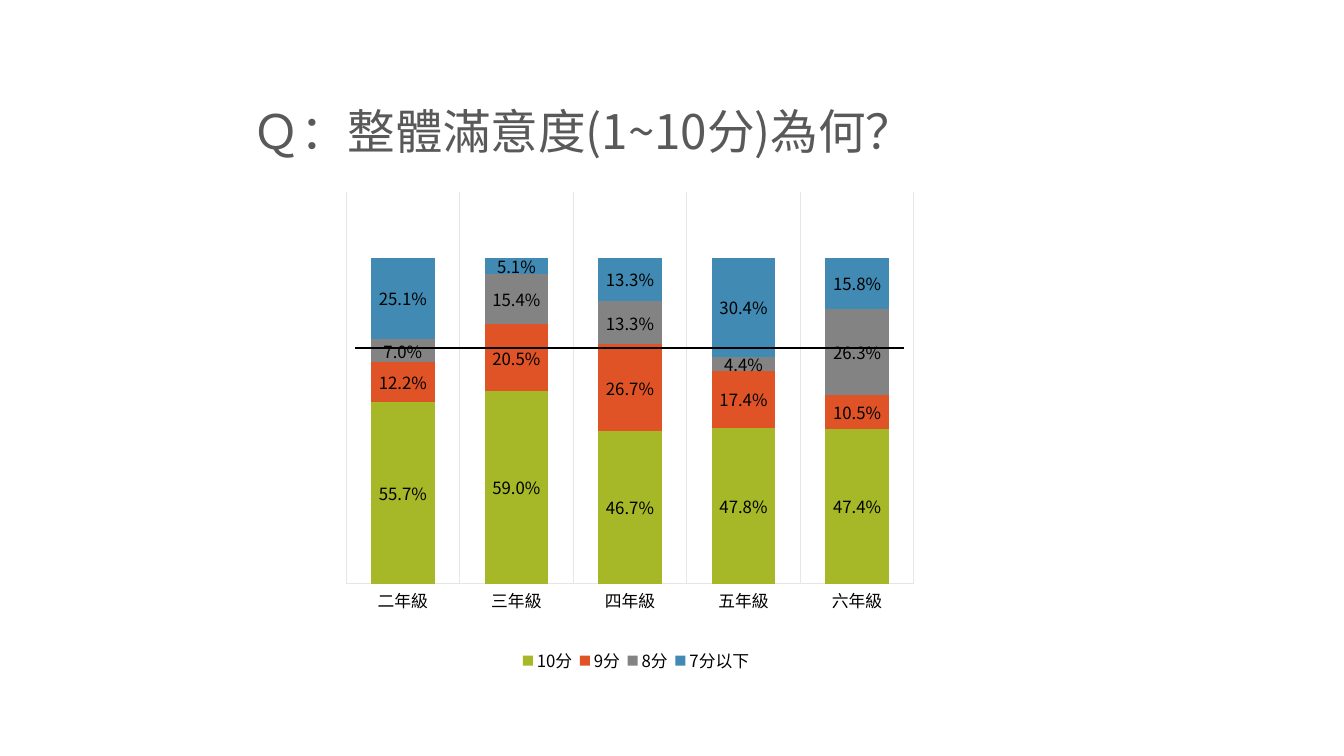
from lxml import etree
from pptx import Presentation
from pptx.chart.data import CategoryChartData
from pptx.dml.color import RGBColor
from pptx.enum.chart import XL_CHART_TYPE, XL_LABEL_POSITION, XL_LEGEND_POSITION, XL_TICK_MARK
from pptx.enum.shapes import MSO_CONNECTOR
from pptx.enum.text import MSO_ANCHOR
from pptx.oxml.ns import qn
from pptx.util import Emu, Pt

COLUMN_STACKED = XL_CHART_TYPE.COLUMN_STACKED
LABEL_CENTER = XL_LABEL_POSITION.CENTER
LEGEND_TOP = XL_LEGEND_POSITION.TOP
TICK_NONE = XL_TICK_MARK.NONE
STRAIGHT = MSO_CONNECTOR.STRAIGHT
ANCHOR_BOTTOM = MSO_ANCHOR.BOTTOM

FONT = "Noto Sans CJK SC"
COLORS = {
    "title": "595959",
    "text": "000000",
    "grid": "E6E6E6",
    "10分": "A6B727",
    "9分": "DF5327",
    "8分": "838383",
    "7分以下": "418AB3",
}
GRADES = ["二年級", "三年級", "四年級", "五年級", "六年級"]
SCORES = {
    "10分": [0.557, 0.59, 0.467, 0.478, 0.474],
    "9分": [0.122, 0.205, 0.267, 0.174, 0.105],
    "8分": [0.07, 0.154, 0.133, 0.044, 0.263],
    "7分以下": [0.251, 0.051, 0.133, 0.304, 0.158],
}


def px(*lengths):
    return [Emu(round(length * 914400 / 100.8)) for length in lengths]


def place(parent, index, settings):
    """Give a chart part a manual layout, as fractions of the chart."""
    for old_layout in parent.findall(qn("c:layout")):
        parent.remove(old_layout)
    layout = etree.Element(qn("c:layout"))
    manual = etree.SubElement(layout, qn("c:manualLayout"))
    for name, value in settings.items():
        etree.SubElement(manual, qn(f"c:{name}")).set("val", str(value))
    parent.insert(index, layout)


presentation = Presentation()
presentation.slide_width, presentation.slide_height = px(1344, 756)
slide = presentation.slides.add_slide(presentation.slide_layouts[6])

# Title
title = slide.shapes.add_textbox(*px(243, 33, 1033, 132))
text_frame = title.text_frame
text_frame.word_wrap = True
text_frame.vertical_anchor = ANCHOR_BOTTOM
text_frame.text = "Ｑ：整體滿意度(1~10分)為何？"
paragraph = text_frame.paragraphs[0]
paragraph.line_spacing = 0.9
run = paragraph.runs[0]
run.font.size = Pt(34)
run.font.name = FONT
run.font.color.rgb = RGBColor.from_string(COLORS["title"])
east_asian = etree.SubElement(run.font._element, qn("a:ea"))
east_asian.set("typeface", FONT)

# Chart data
chart_data = CategoryChartData(number_format="0.0%")
chart_data.categories = GRADES
for score, shares in SCORES.items():
    chart_data.add_series(score, shares)
chart = slide.shapes.add_chart(COLUMN_STACKED, *px(328, 166, 604, 529), chart_data).chart
chart.has_title = False

# Columns and their labels
plot = chart.plots[0]
plot.gap_width = 79
plot.overlap = 100
plot.vary_by_categories = False
fonts = [chart.font]
for series in plot.series:
    series.format.fill.solid()
    series.format.fill.fore_color.rgb = RGBColor.from_string(COLORS[series.name])
    labels = series.data_labels
    labels.show_value = True
    labels.position = LABEL_CENTER
    labels.number_format = "0.0%"
    labels.number_format_is_linked = False
    fonts.append(labels.font)

# Axes
value_axis = chart.value_axis
value_axis.minimum_scale = 0
value_axis.maximum_scale = 1.2
value_axis.has_major_gridlines = False
value_axis.visible = False
category_axis = chart.category_axis
category_axis.major_tick_mark = TICK_NONE
category_axis.has_major_gridlines = True
for line in (category_axis.format.line, category_axis.major_gridlines.format.line):
    line.color.rgb = RGBColor.from_string(COLORS["grid"])
    line.width = Pt(0.75)
fonts.append(category_axis.tick_labels.font)

# Legend
chart.has_legend = True
legend = chart.legend
legend.position = LEGEND_TOP
legend.include_in_layout = False
fonts.append(legend.font)

# Chart fonts
for font in fonts:
    font.size = Pt(12)
    font.name = FONT
    font.color.rgb = RGBColor.from_string(COLORS["text"])
for latin in chart.element.iter(qn("a:latin")):
    east_asian = etree.Element(qn("a:ea"))
    east_asian.set("typeface", FONT)
    latin.addnext(east_asian)

# Plot and legend positions
plot_area = chart.element.find(".//" + qn("c:plotArea"))
place(plot_area, 0, {"layoutTarget": "inner", "xMode": "edge", "yMode": "edge",
                     "x": 0.03, "y": 0.05, "w": 0.94, "h": 0.74})
legend_part = chart.element.find(".//" + qn("c:legend"))
place(legend_part, 1, {"xMode": "edge", "yMode": "edge",
                       "x": 0.31, "y": 0.91, "w": 0.4, "h": 0.05})

# Reference line across the columns
reference_line = slide.shapes.add_connector(STRAIGHT, *px(355, 348, 904, 348))
reference_line.line.color.rgb = RGBColor.from_string(COLORS["text"])
reference_line.line.width = Pt(1.5)
etree.SubElement(reference_line._element.spPr, qn("a:effectLst"))

presentation.save("out.pptx")
